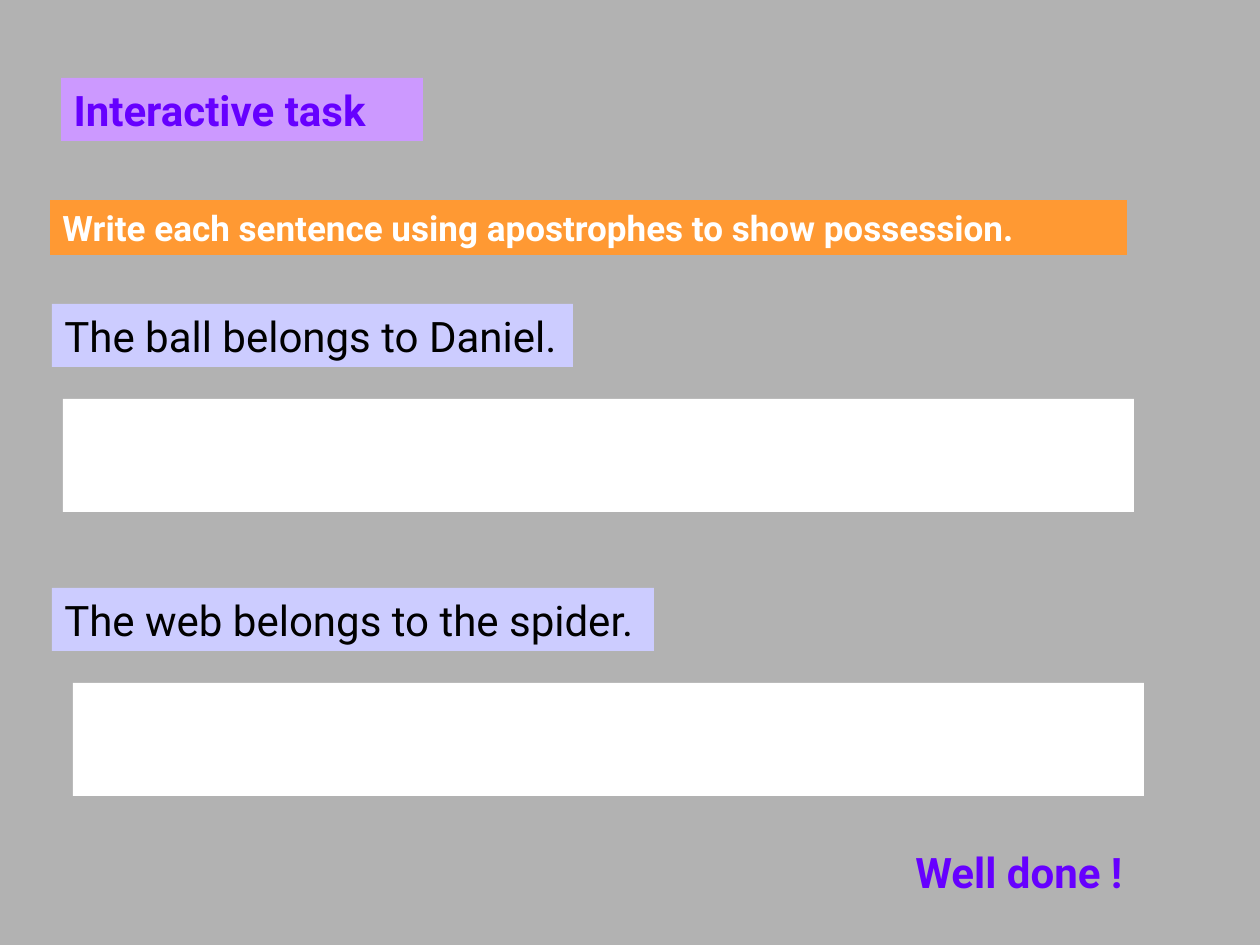
from pptx import Presentation
from pptx.dml.color import RGBColor
from pptx.enum.shapes import MSO_SHAPE
from pptx.enum.text import MSO_ANCHOR, MSO_AUTO_SIZE, PP_ALIGN
from pptx.util import Emu, Pt

EMU_PER_PX = 914400 / 126
FONT = "Roboto"
COLOURS = {
    "background": "B2B2B2",
    "heading": "CC99FF",
    "accent": "6600FF",
    "instruction": "FF9933",
    "sentence": "CCCCFF",
    "white": "FFFFFF",
    "black": "000000",
}


def px(length):
    return Emu(round(length * EMU_PER_PX))


def paint(fill, colour):
    fill.solid()
    fill.fore_color.rgb = RGBColor.from_string(COLOURS[colour])


def write(box, text, colour, size=24, bold=False):
    frame = box.text_frame
    frame.text = text
    frame.word_wrap = True
    frame.auto_size = MSO_AUTO_SIZE.NONE
    frame.vertical_anchor = MSO_ANCHOR.TOP
    frame.margin_right = 0
    para = frame.paragraphs[0]
    para.alignment = PP_ALIGN.LEFT
    para.font.name = FONT
    para.font.size = Pt(size)
    para.font.bold = bold
    para.font.color.rgb = RGBColor.from_string(COLOURS[colour])


def add_title(page, text, left, top, width, height):
    title = page.shapes.title
    title.left, title.top = px(left), px(top)
    title.width, title.height = px(width), px(height)
    paint(title.fill, "heading")
    write(title, text, "accent", bold=True)


def add_panel(page, left, top, width, height, colour):
    panel = page.shapes.add_shape(
        MSO_SHAPE.RECTANGLE, px(left), px(top), px(width), px(height))
    panel.shadow.inherit = False
    panel.line.fill.background()
    paint(panel.fill, colour)
    return panel


def add_exercise(page, sentence, top, label_width, answer_left):
    """A sentence label with an empty answer panel below it."""
    label = add_panel(page, 52, top, label_width, 63, "sentence")
    write(label, sentence, "black")
    add_panel(page, answer_left, top + 95, 1071, 113, "white")


def main():
    deck = Presentation()
    deck.slide_width, deck.slide_height = px(1260), px(945)
    page = deck.slides.add_slide(deck.slide_layouts[5])
    paint(page.background.fill, "background")

    # Heading and instruction
    add_title(page, "Interactive task", 61, 78, 362, 63)
    instruction = add_panel(page, 50, 200, 1077, 55, "instruction")
    write(instruction, "Write each sentence using apostrophes to show possession.",
          "white", size=20, bold=True)

    # Exercises
    add_exercise(page, "The ball belongs to Daniel.", 304, 521, 63)
    add_exercise(page, "The web belongs to the spider.", 588, 602, 73)

    # Closing praise
    praise = page.shapes.add_textbox(px(903), px(840), px(262), px(63))
    write(praise, "Well done !", "accent", bold=True)

    deck.save("out.pptx")


if __name__ == "__main__":
    main()
